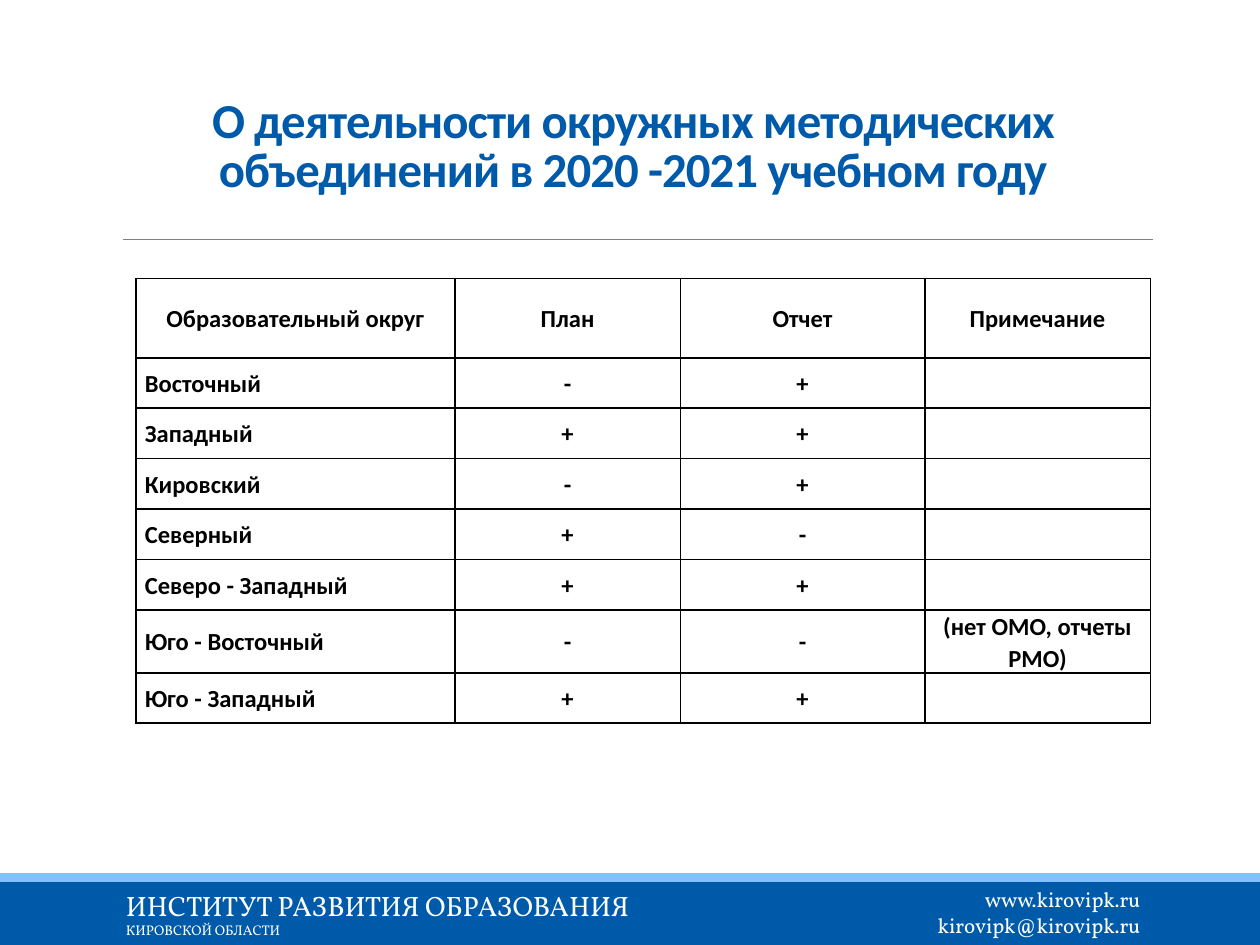
"""Build the slide on district methodical associations with its table and footer."""
import pptx
import pptx.util
import pptx.dml.color
import pptx.enum.shapes
import pptx.enum.text
import pptx.oxml
import pptx.oxml.ns
from pptx.util import Inches

ALIGN = pptx.enum.text.PP_ALIGN
ANCHOR = pptx.enum.text.MSO_ANCHOR
ROWS = [
    ("Образовательный округ", "План", "Отчет", "Примечание"),
    ("Восточный", "-", "+", ""),
    ("Западный", "+", "+", ""),
    ("Кировский", "-", "+", ""),
    ("Северный", "+", "-", ""),
    ("Северо - Западный", "+", "+", ""),
    ("Юго - Восточный", "-", "-", "(нет ОМО, отчеты РМО)"),
    ("Юго - Западный", "+", "+", ""),
]


def rgb(value):
    """Return the colour for a hex string."""
    return pptx.dml.color.RGBColor.from_string(value)


class Deck:
    """Hold the slide and its style, and draw each kind of element."""

    blue, light, grey, white, black = "005AAA", "81C3FF", "808080", "FFFFFF", "000000"
    body, serif = "Calibri", "Vollkorn"

    def __init__(self, prs):
        """Add the slide."""
        self.s = prs.slides.add_slide(prs.slide_layouts[5])

    def format(self, p, size, font, color, bold=False, align=ALIGN.LEFT, spacing=1.0):
        """Format a paragraph and its runs."""
        p.alignment = align
        p.line_spacing = spacing
        for f in [p.font] + [r.font for r in p.runs]:
            f.size, f.name, f.bold = pptx.util.Pt(size), font, bold
            f.color.rgb = rgb(color)

    def title(self, text, x, y, w, h):
        """Fill and place the title."""
        sp = self.s.shapes.title
        sp.left, sp.top, sp.width, sp.height = map(Inches, (x, y, w, h))
        tf = sp.text_frame
        tf.text = text
        tf.word_wrap = True
        tf.auto_size = pptx.enum.text.MSO_AUTO_SIZE.NONE
        tf.vertical_anchor = ANCHOR.BOTTOM
        tf.margin_bottom = Inches(0.33)
        p = tf.paragraphs[0]
        self.format(p, 27.9, self.body, self.blue, True, ALIGN.CENTER, 0.85)
        for r in p.runs:
            r.font._element.set("spc", "-50")

    def band(self, y, h, color):
        """Draw a full-width band."""
        sp = self.s.shapes.add_shape(
            pptx.enum.shapes.MSO_SHAPE.RECTANGLE, 0, Inches(y), Inches(10), Inches(h))
        sp.shadow.inherit = False
        sp.fill.solid()
        sp.fill.fore_color.rgb = rgb(color)
        sp.line.fill.background()

    def rule(self, x1, x2, y):
        """Draw a thin horizontal line."""
        c = self.s.shapes.add_connector(
            pptx.enum.shapes.MSO_CONNECTOR.STRAIGHT,
            Inches(x1), Inches(y), Inches(x2), Inches(y))
        c.line.color.rgb = rgb(self.grey)
        c.line.width = pptx.util.Pt(0.5)
        c._element.spPr.append(pptx.oxml.parse_xml(
            f'<a:effectLst {pptx.oxml.ns.nsdecls("a")}/>'))

    def text(self, lines, x, y, w, h, align):
        """Add footer lines given as text and size."""
        tf = self.s.shapes.add_textbox(*map(Inches, (x, y, w, h))).text_frame
        tf.word_wrap = True
        tf.text = "\n".join(line for line, size in lines)
        for p, (line, size) in zip(tf.paragraphs, lines):
            self.format(p, size, self.serif, self.white, align=align)

    def border(self, cell):
        """Draw the four borders of a cell."""
        pr = cell._tc.get_or_add_tcPr()
        for i, side in enumerate(("lnL", "lnR", "lnT", "lnB")):
            pr.insert(i, pptx.oxml.parse_xml(
                f'<a:{side} {pptx.oxml.ns.nsdecls("a")} w="12700"><a:solidFill>'
                f'<a:srgbClr val="{self.black}"/></a:solidFill></a:{side}>'))

    def table(self, rows, x, y, widths, heights):
        """Add the bordered table."""
        t = self.s.shapes.add_table(
            len(rows), len(widths), Inches(x), Inches(y),
            Inches(sum(widths)), Inches(sum(heights))).table
        t.first_row = t.horz_banding = False
        for col, w in zip(t.columns, widths):
            col.width = Inches(w)
        for i, (row, h) in enumerate(zip(rows, heights)):
            t.rows[i].height = Inches(h)
            for j, value in enumerate(row):
                cell = t.cell(i, j)
                cell.text = value
                cell.fill.background()
                cell.vertical_anchor = ANCHOR.MIDDLE
                cell.margin_left = cell.margin_right = Inches(0.07)
                cell.margin_top = cell.margin_bottom = 0
                align = ALIGN.LEFT if i and not j else ALIGN.CENTER
                self.format(cell.text_frame.paragraphs[0], 14, self.body,
                            self.black, True, align, 1.07)
                self.border(cell)


def main():
    """Build and save the slide."""
    prs = pptx.Presentation()
    prs.slide_width, prs.slide_height = Inches(10), Inches(7.5)
    d = Deck(prs)
    d.band(7, 0.5, d.blue)
    d.band(6.93, 0.07, d.light)
    d.rule(0.98, 9.15, 1.9)
    d.text([("www.kirovipk.ru", 12), ("kirovipk@kirovipk.ru", 12)],
           7.27, 6.99, 1.88, 0.5, ALIGN.RIGHT)
    d.text([("ИНСТИТУТ РАЗВИТИЯ ОБРАЗОВАНИЯ", 16), ("КИРОВСКОЙ ОБЛАСТИ", 8)],
           0.9, 7, 4.38, 0.5, ALIGN.LEFT)
    d.title("О деятельности окружных методических объединений в 2020 -2021 учебном году",
            0.9, 0.31, 8.25, 1.59)
    d.table(ROWS, 1.08, 2.21, [2.53, 1.79, 1.94, 1.79], [0.63] + [0.4] * 7)
    prs.save("out.pptx")


if __name__ == "__main__":
    main()
